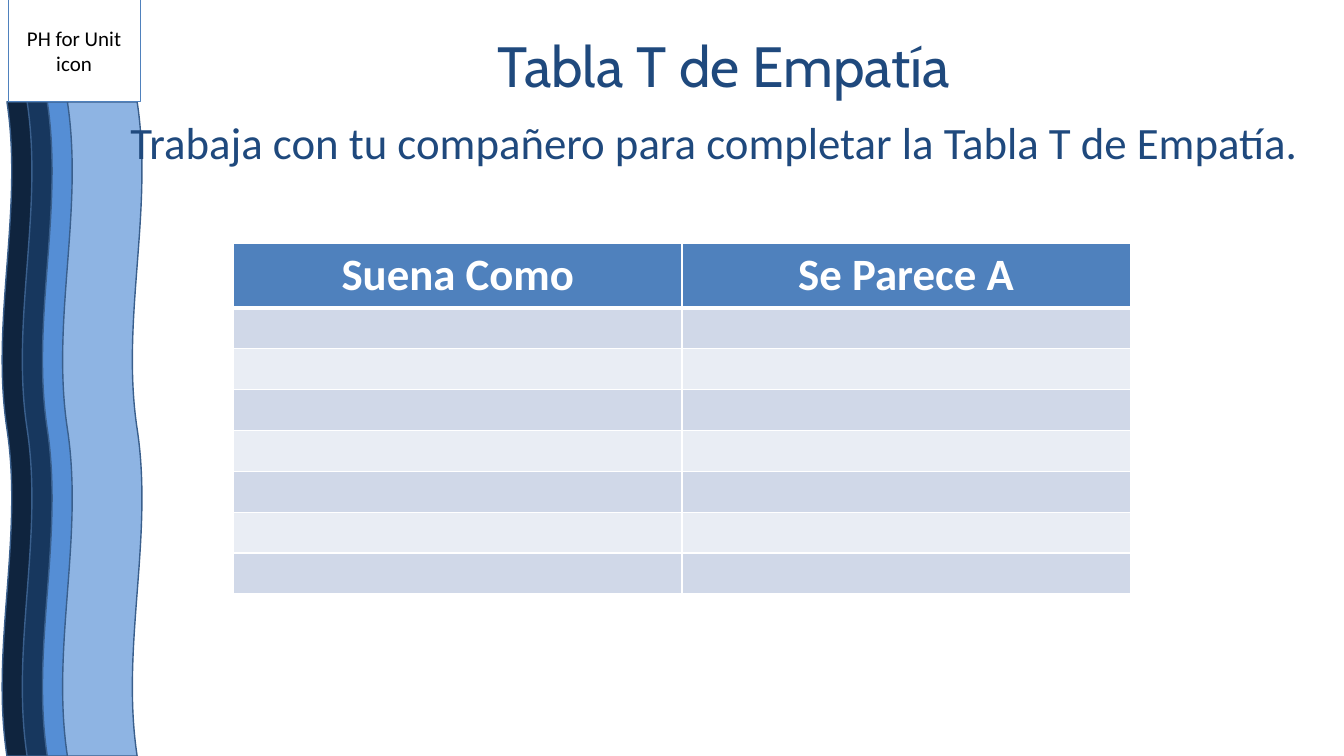
"""Build the empathy T-chart slide."""
from lxml import etree
from pptx import Presentation
from pptx.dml.color import RGBColor
from pptx.enum.shapes import MSO_SHAPE
from pptx.enum.text import MSO_ANCHOR, MSO_AUTO_SIZE, PP_ALIGN
from pptx.oxml.ns import qn
from pptx.util import Inches, Pt

RECT, WAVE = MSO_SHAPE.RECTANGLE, MSO_SHAPE.DOUBLE_WAVE
MIDDLE, BOTTOM, TOP = MSO_ANCHOR.MIDDLE, MSO_ANCHOR.BOTTOM, MSO_ANCHOR.TOP
CENTER, FIXED = PP_ALIGN.CENTER, MSO_AUTO_SIZE.NONE

HEX = {
    "navy": "0F243E", "deep": "17375E", "mid": "558ED5", "pale": "8EB4E3",
    "edge": "3A5F8C", "blue": "4F81BD", "title": "1F497D",
    "odd": "D0D8E8", "even": "E9EDF4", "white": "FFFFFF", "black": "000000",
}
FONTS = {
    "title": {"name": "Cabin", "size": Pt(40.5), "bold": False},
    "lead": {"name": "Calibri", "size": Pt(32), "bold": False},
    "head": {"name": "Calibri", "size": Pt(32), "bold": True},
    "icon": {"name": "Calibri", "size": Pt(15), "bold": False},
}
WIDTH, HEIGHT = Inches(13.33), Inches(7.5)


def color(key):
    return RGBColor.from_string(HEX[key])


class Page:
    """Hold the slide and draw on it in percent of its size."""

    def __init__(self, deck):
        self.slide = deck.slides.add_slide(deck.slide_layouts[5])
        self.shapes = self.slide.shapes

    def box(self, x, y, w, h):
        return [round(part * size / 100) for part, size in
                zip((x, y, w, h), (WIDTH, HEIGHT, WIDTH, HEIGHT))]

    def label(self, frame, text, style, tint, **form):
        para = frame.paragraphs[0]
        for name, value in {"alignment": CENTER, **form}.items():
            setattr(para, name, value)
        run = para.add_run()
        run.text = text
        for name, value in FONTS[style].items():
            setattr(run.font, name, value)
        run.font.color.rgb = color(tint)

    def frame(self, shape, anchor):
        form = {"word_wrap": True, "auto_size": FIXED, "vertical_anchor": anchor}
        for name, value in form.items():
            setattr(shape.text_frame, name, value)
        return shape.text_frame

    def shape(self, kind, area, fill, edge, width):
        item = self.shapes.add_shape(kind, *area)
        item.shadow.inherit = False
        item.fill.solid()
        item.fill.fore_color.rgb = color(fill)
        item.line.color.rgb = color(edge)
        item.line.width = Pt(width)
        return item

    def wave(self, area, fill):
        x, y, w, h = self.box(*area)
        turned = (x + (w - h) // 2, y + (h - w) // 2, h, w)
        self.shape(WAVE, turned, fill, "edge", 1).rotation = 270

    def icon(self, area, text):
        item = self.shape(RECT, self.box(*area), "white", "blue", 0.75)
        self.label(self.frame(item, MIDDLE), text, "icon", "black")

    def title(self, area, text):
        item = self.shapes.title
        item.left, item.top, item.width, item.height = self.box(*area)
        self.label(self.frame(item, BOTTOM), text, "title", "title", line_spacing=0.9)

    def lead(self, area, text):
        item = self.shapes.add_textbox(*self.box(*area))
        self.label(self.frame(item, TOP), text, "lead", "title")

    def rule(self, cell, side, width):
        props = cell._tc.get_or_add_tcPr()
        line = etree.SubElement(props, qn("a:ln" + side), w=str(Pt(width)))
        solid = etree.SubElement(line, qn("a:solidFill"))
        etree.SubElement(solid, qn("a:srgbClr"), val=HEX["white"])

    def table(self, area, heads, count, first):
        x, y, w, h = self.box(*area)
        grid = self.shapes.add_table(count + 1, len(heads), x, y, w, h).table
        top = round(first * HEIGHT / 100)
        for r, row in enumerate(grid.rows):
            row.height = (h - top) // count if r else top
            fill = ("even", "odd")[r % 2] if r else "blue"
            for c, cell in enumerate(row.cells):
                thick = {"L": 1, "R": 1, "T": 3 if r == 1 else 1, "B": 1 if r else 3}
                for side, width in thick.items():
                    self.rule(cell, side, width)
                cell.fill.solid()
                cell.fill.fore_color.rgb = color(fill)
                if r == 0:
                    self.label(cell.text_frame, heads[c], "head", "white")


def main():
    deck = Presentation()
    deck.slide_width, deck.slide_height = WIDTH, HEIGHT
    page = Page(deck)
    for i, fill in enumerate(("navy", "deep", "mid", "pale")):
        page.wave((0.15 + 1.5 * i, 13.47, 5.93, 86.53), fill)
    page.icon((0.6, 0, 9.83, 13.47), "PH for Unit icon")
    page.title((29.18, 3.87, 49.36, 10), "Tabla T de Empatía")
    page.lead((8.78, 14.53, 88.75, 8.53),
              "Trabaja con tu compañero para completar la Tabla T de Empatía.")
    page.table((17.4, 32.13, 66.69, 46.27), ("Suena Como", "Se Parece A"), 7, 8.4)
    deck.save("out.pptx")


if __name__ == "__main__":
    main()
